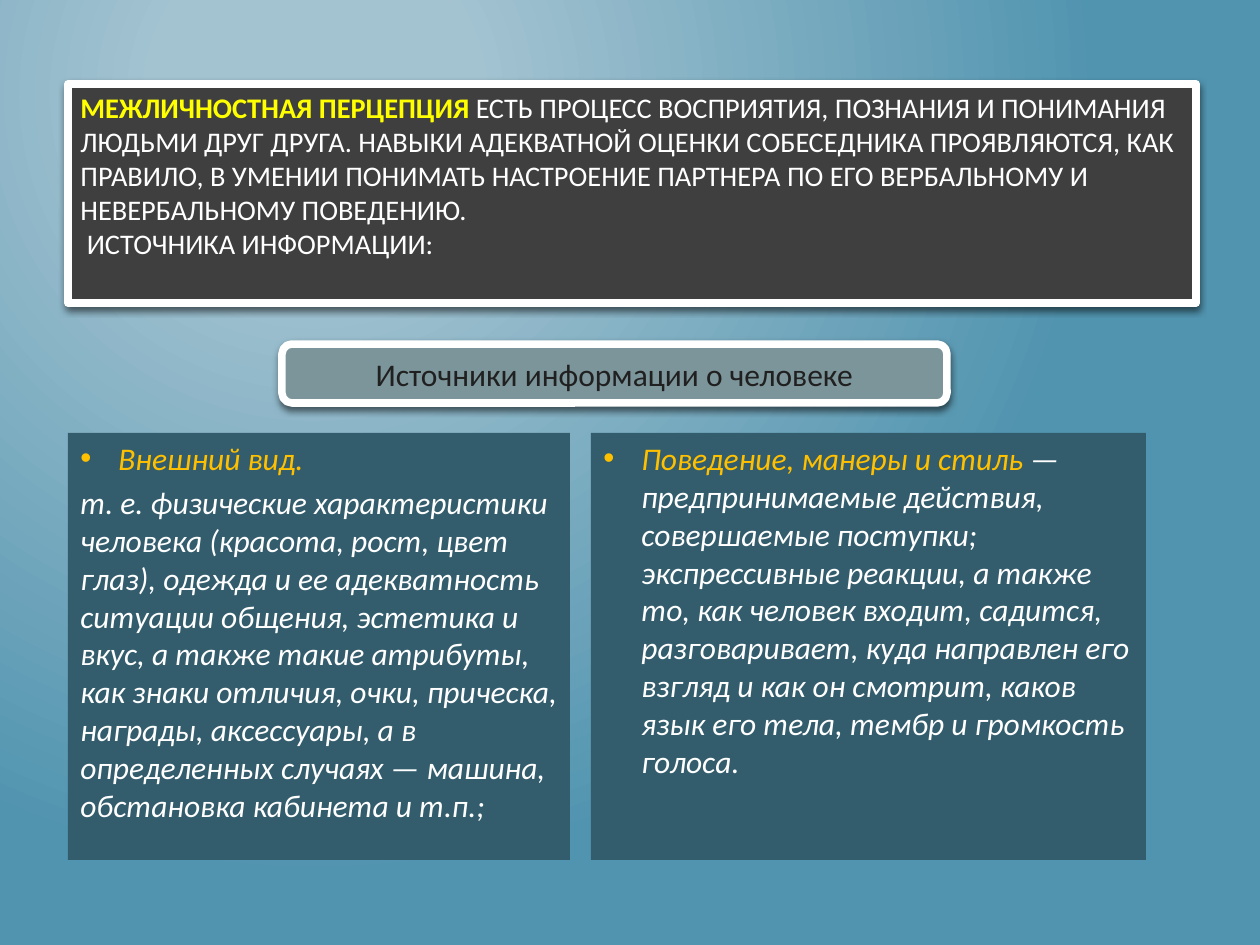
"""Build the slide on interpersonal perception and its sources of information."""
import pptx
import pptx.dml.color
import pptx.enum.shapes
import pptx.enum.text
import pptx.oxml
import pptx.oxml.ns
import pptx.util

ALIGN = pptx.enum.text.PP_ALIGN
ANCHOR = pptx.enum.text.MSO_ANCHOR
SHAPE = pptx.enum.shapes.MSO_SHAPE
NAMESPACE = pptx.oxml.ns.nsdecls("a")

FONT = "Calibri"
WHITE, YELLOW, AMBER, INK = "FFFFFF", "FFFF00", "FFC000", "202020"
DARK, TEAL, GREY = "3F3F3F", "335D6D", "7C959A"
GRADIENT = [(20, "A3C3D1"), (100, "5194AF")]
INDENT = 38

DEFINITION = [
    [
        ("МЕЖЛИЧНОСТНАЯ ПЕРЦЕПЦИЯ ", YELLOW, "bold"),
        ("ЕСТЬ ПРОЦЕСС ВОСПРИЯТИЯ, ПОЗНАНИЯ И ПОНИМАНИЯ ЛЮДЬМИ ДРУГ ДРУГА. "
         "НАВЫКИ АДЕКВАТНОЙ ОЦЕНКИ СОБЕСЕДНИКА ПРОЯВЛЯЮТСЯ, КАК ПРАВИЛО, "
         "В УМЕНИИ ПОНИМАТЬ НАСТРОЕНИЕ ПАРТНЕРА ПО ЕГО ВЕРБАЛЬНОМУ И "
         "НЕВЕРБАЛЬНОМУ ПОВЕДЕНИЮ.", WHITE, ""),
    ],
    [(" ИСТОЧНИКА ИНФОРМАЦИИ:", WHITE, "")],
]
HEADING = [[("Источники информации о человеке", INK, "")]]
BEHAVIOUR = [
    [
        ("Поведение, манеры и стиль ", AMBER, "italic"),
        ("— предпринимаемые действия, совершаемые поступки; экспрессивные "
         "реакции, а также то, как человек входит, садится, разговаривает, "
         "куда направлен его взгляд и как он смотрит, каков язык его тела, "
         "тембр и громкость голоса.", WHITE, "italic"),
    ],
]
APPEARANCE = [
    [("Внешний вид.", AMBER, "italic")],
    [("т. е. физические характеристики человека (красота, рост, цвет глаз), "
      "одежда и ее адекватность ситуации общения, эстетика и вкус, а также "
      "такие атрибуты, как знаки отличия, очки, прическа, награды, "
      "аксессуары, а в определенных случаях — машина, обстановка кабинета "
      "и т.п.;", WHITE, "italic")],
]


def px(value):
    return round(value * 914400 / 126)


def color(value):
    return pptx.dml.color.RGBColor.from_string(value)


def paint_background(slide):
    slide.background.fill.gradient()
    properties = slide.background._cSld.bg.bgPr
    stops = "".join(
        f'<a:gs pos="{position * 1000}"><a:srgbClr val="{value}"/></a:gs>'
        for position, value in GRADIENT
    )
    gradient = pptx.oxml.parse_xml(
        f'<a:gradFill {NAMESPACE} rotWithShape="1"><a:gsLst>{stops}</a:gsLst>'
        '<a:path path="circle"><a:fillToRect l="50000" t="20000" r="100000" b="100000"/>'
        "</a:path></a:gradFill>"
    )
    properties.replace(properties[0], gradient)


def add_panel(slide, kind, box, fill, framed=False):
    shape = slide.shapes.add_shape(kind, *map(px, box))
    shape.shadow.inherit = False
    shape.fill.solid()
    shape.fill.fore_color.rgb = color(fill)
    if framed:
        shape.line.color.rgb = color(WHITE)
        shape.line.width = pptx.util.Pt(4.32)
        effects = shape._element.spPr.find(pptx.oxml.ns.qn("a:effectLst"))
        effects.append(pptx.oxml.parse_xml(
            f'<a:outerShdw {NAMESPACE} blurRad="50800" dist="25400" dir="5400000" '
            'rotWithShape="0"><a:srgbClr val="000000"><a:alpha val="55000"/>'
            "</a:srgbClr></a:outerShdw>"
        ))
    else:
        shape.line.fill.background()
    return shape


def add_bullet(paragraph):
    properties = paragraph._p.get_or_add_pPr()
    properties.set("marL", str(px(INDENT)))
    properties.set("indent", str(-px(INDENT)))
    for tag in ('buFont typeface="Arial"', 'buChar char="•"'):
        properties.append(pptx.oxml.parse_xml(f"<a:{tag} {NAMESPACE}/>"))


def write(shape, paragraphs, size, align=ALIGN.LEFT, anchor=ANCHOR.TOP, before=0, bullet=False):
    frame = shape.text_frame
    frame.word_wrap = True
    frame.vertical_anchor = anchor
    for index, runs in enumerate(paragraphs):
        paragraph = frame.add_paragraph() if index else frame.paragraphs[0]
        paragraph.alignment = align
        paragraph.space_before = pptx.util.Pt(before)
        if bullet and index == 0:
            add_bullet(paragraph)
        for text, value, style in runs:
            run = paragraph.add_run()
            run.text = text
            run.font.name = FONT
            run.font.size = pptx.util.Pt(size)
            run.font.color.rgb = color(value)
            run.font.bold = style == "bold"
            run.font.italic = style == "italic"


def main():
    presentation = pptx.Presentation()
    presentation.slide_width, presentation.slide_height = px(1260), px(945)
    slide = presentation.slides.add_slide(presentation.slide_layouts[6])
    paint_background(slide)

    definition = add_panel(slide, SHAPE.RECTANGLE, (68, 84, 1128, 219), DARK, framed=True)
    write(definition, DEFINITION, 16.2)
    for left, width, paragraphs in [(591, 555, BEHAVIOUR), (68, 502, APPEARANCE)]:
        column = add_panel(slide, SHAPE.RECTANGLE, (left, 433, width, 427), TEAL)
        write(column, paragraphs, 18, before=3.6, bullet=True)
    heading = add_panel(slide, SHAPE.ROUNDED_RECTANGLE, (282, 344, 665, 59), GREY, framed=True)
    write(heading, HEADING, 18, ALIGN.CENTER, ANCHOR.MIDDLE)

    presentation.save("out.pptx")


if __name__ == "__main__":
    main()
